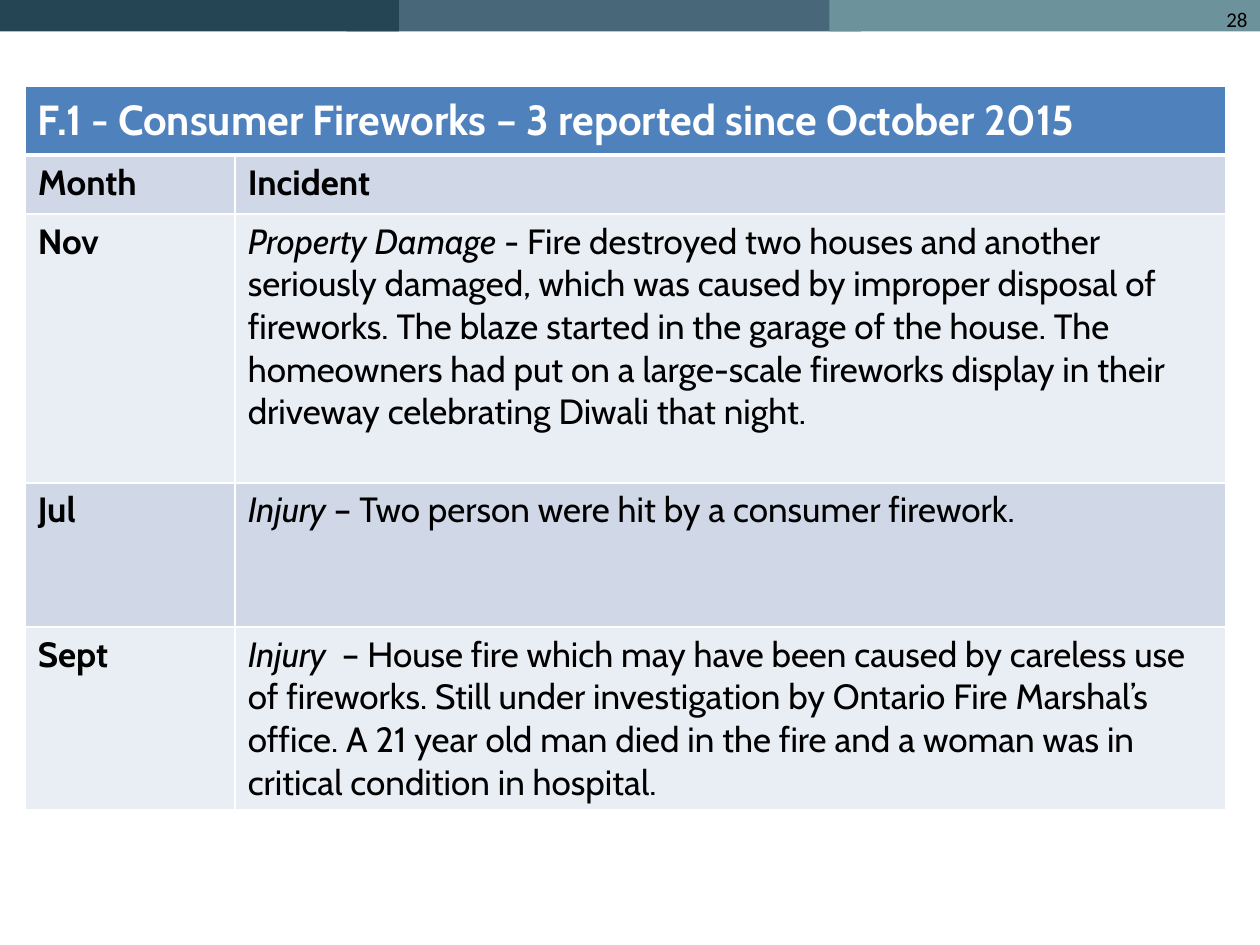
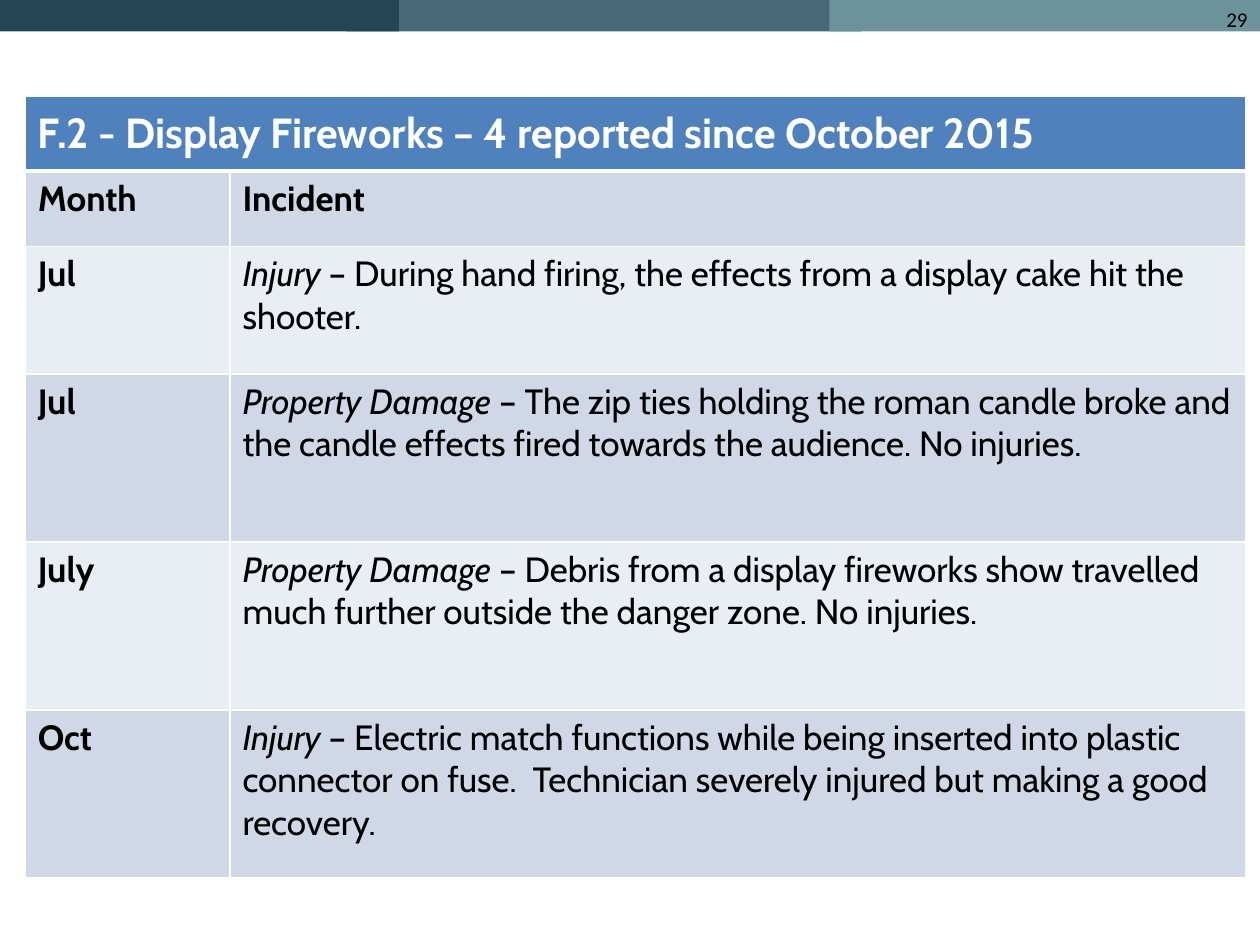
from dataclasses import dataclass

from lxml import etree
from pptx import Presentation
from pptx.dml.color import RGBColor
from pptx.enum.shapes import MSO_SHAPE
from pptx.enum.text import MSO_ANCHOR, PP_ALIGN
from pptx.oxml.ns import qn
from pptx.util import Pt

RECTANGLE = MSO_SHAPE.RECTANGLE
MIDDLE = MSO_ANCHOR.MIDDLE
RIGHT = PP_ALIGN.RIGHT
BLANK_LAYOUT = 6


@dataclass(frozen=True)
class Theme:
    table_font: str = "Cabin"
    number_font: str = "Calibri"
    heading_size: int = 24
    body_size: int = 20
    number_size: int = 12
    text: str = "000000"
    white: str = "FFFFFF"
    heading_fill: str = "4F81BD"
    row_fills: tuple = ("D0D8E8", "E9EDF4")
    thin_line: int = 1
    thick_line: int = 3


THEME = Theme()

# Left, width and colour of each band, from back to front
TOP_BANDS = [
    (198, 294, "486879"),
    (0, 228, "254555"),
    (474, 246, "6C939B"),
]
BAND_HEIGHT = 18
TABLE_LEFT = 14.4

CONSUMER_INCIDENTS = [
    ("Nov", "Property Damage ",
     "- Fire destroyed two houses and another seriously damaged, which was caused by "
     "improper disposal of fireworks. The blaze started in the garage of the house. "
     "The homeowners had put on a large-scale fireworks display in their driveway "
     "celebrating Diwali that night."),
    ("Jul", "Injury", " – Two person were hit by a consumer firework."),
    ("Sept", "Injury ",
     " – House fire which may have been caused by careless use of fireworks. Still under "
     "investigation by Ontario Fire Marshal’s office. A 21 year old man died in the fire "
     "and a woman was in critical condition in hospital."),
]

DISPLAY_INCIDENTS = [
    ("Jul", "Injury",
     " – During hand firing, the effects from a display cake hit the shooter."),
    ("Jul", "Property Damage ",
     "– The zip ties holding the roman candle broke and the candle effects fired towards "
     "the audience. No injuries."),
    ("July", "Property Damage ",
     "– Debris from a display fireworks show travelled much further outside the danger "
     "zone. No injuries."),
    ("Oct", "Injury",
     " – Electric match functions while being inserted into plastic connector on fuse.  "
     "Technician severely injured but making a good recovery."),
]


def format_run(run, font_name, size, color, bold=False, italic=False):
    font = run.font
    font.name = font_name
    font.size = Pt(size)
    font.color.rgb = RGBColor.from_string(color)
    font.bold = bold
    font.italic = italic


def add_top_bands(slide):
    for left, width, color in TOP_BANDS:
        band = slide.shapes.add_shape(RECTANGLE, Pt(left), 0, Pt(width), Pt(BAND_HEIGHT))
        band.shadow.inherit = False
        band.fill.solid()
        band.fill.fore_color.rgb = RGBColor.from_string(color)
        band.line.fill.background()


def add_page_number(slide, number):
    box = slide.shapes.add_textbox(Pt(552), 0, Pt(168), Pt(37.5))
    box.text_frame.word_wrap = True
    box.text_frame.text = str(number)
    paragraph = box.text_frame.paragraphs[0]
    paragraph.alignment = RIGHT
    format_run(paragraph.runs[0], THEME.number_font, THEME.number_size, THEME.text)


def set_borders(cell, top, bottom):
    """Draw white borders; must run before the fill, which follows them in the XML."""
    properties = cell._tc.get_or_add_tcPr()
    widths = {"a:lnL": THEME.thin_line, "a:lnR": THEME.thin_line,
              "a:lnT": top, "a:lnB": bottom}
    for tag, width in widths.items():
        line = etree.SubElement(properties, qn(tag), w=str(Pt(width)))
        fill = etree.SubElement(line, qn("a:solidFill"))
        etree.SubElement(fill, qn("a:srgbClr"), val=THEME.white)


def style_cell(cell, color, top=THEME.thin_line, bottom=THEME.thin_line):
    set_borders(cell, top, bottom)
    cell.fill.solid()
    cell.fill.fore_color.rgb = RGBColor.from_string(color)


def write_bold(cell, text, size=THEME.body_size, color=THEME.text):
    cell.text_frame.text = text
    run = cell.text_frame.paragraphs[0].runs[0]
    format_run(run, THEME.table_font, size, color, bold=True)


def write_incident(cell, category, description):
    paragraph = cell.text_frame.paragraphs[0]
    for text, italic in ((category, True), (description, False)):
        run = paragraph.add_run()
        run.text = text
        format_run(run, THEME.table_font, THEME.body_size, THEME.text, italic=italic)


def style_table(table):
    """Give the heading its own fill and thick rule, and band the rows below it."""
    table.first_row = False
    table.horz_banding = False
    for row_index, row in enumerate(table.rows):
        for cell in row.cells:
            if row_index == 0:
                style_cell(cell, THEME.heading_fill, bottom=THEME.thick_line)
            else:
                top = THEME.thick_line if row_index == 1 else THEME.thin_line
                style_cell(cell, THEME.row_fills[(row_index - 1) % 2], top=top)


def add_incident_table(slide, top, column_widths, row_heights, heading, incidents):
    frame = slide.shapes.add_table(
        len(row_heights), len(column_widths), Pt(TABLE_LEFT), Pt(top),
        Pt(sum(column_widths)), Pt(sum(row_heights)))
    table = frame.table
    for column, width in zip(table.columns, column_widths):
        column.width = Pt(width)
    for row, height in zip(table.rows, row_heights):
        row.height = Pt(height)
    style_table(table)

    heading_cell = table.cell(0, 0)
    heading_cell.merge(table.cell(0, 1))
    heading_cell.vertical_anchor = MIDDLE
    write_bold(heading_cell, heading, THEME.heading_size, THEME.white)
    for column_index, label in enumerate(("Month", "Incident")):
        write_bold(table.cell(1, column_index), label)
    for row_index, (month, category, description) in enumerate(incidents, start=2):
        write_bold(table.cell(row_index, 0), month)
        write_incident(table.cell(row_index, 1), category, description)


def add_incident_slide(presentation, number, **table_content):
    slide = presentation.slides.add_slide(presentation.slide_layouts[BLANK_LAYOUT])
    add_top_bands(slide)
    add_page_number(slide, number)
    add_incident_table(slide, **table_content)


def main():
    presentation = Presentation()
    presentation.slide_width = Pt(720)
    presentation.slide_height = Pt(540)
    add_incident_slide(
        presentation, 28, top=49, column_widths=(120, 566),
        row_heights=(39.6, 33.8, 153.5, 82.5, 104.5),
        heading="F.1 - Consumer Fireworks – 3 reported since October 2015",
        incidents=CONSUMER_INCIDENTS)
    add_incident_slide(
        presentation, 29, top=54.8, column_widths=(117, 580.5),
        row_heights=(43, 43, 73, 96, 96, 96),
        heading="F.2 - Display Fireworks – 4 reported since October 2015",
        incidents=DISPLAY_INCIDENTS)
    presentation.save("out.pptx")


if __name__ == "__main__":
    main()
